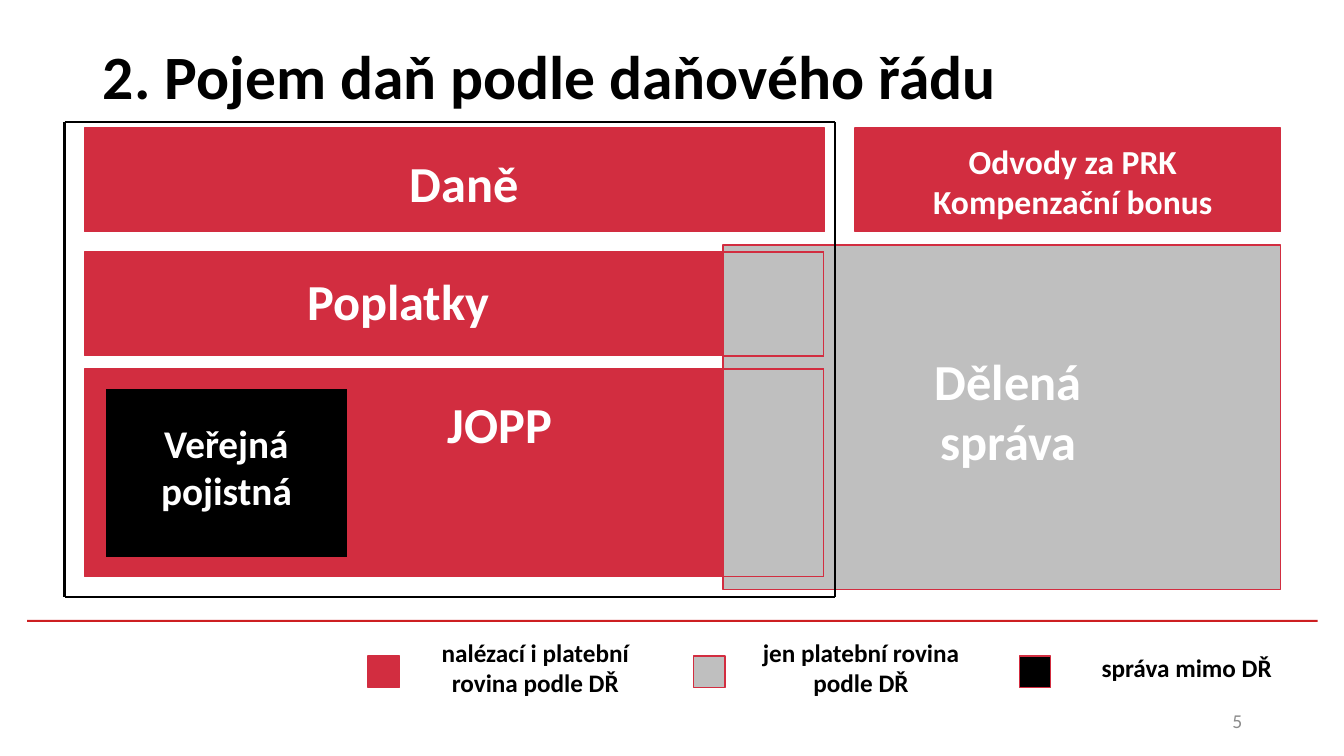
from lxml import etree
from pptx import Presentation
from pptx.dml.color import RGBColor
from pptx.enum.shapes import MSO_CONNECTOR, MSO_SHAPE
from pptx.enum.text import MSO_ANCHOR, PP_ALIGN
from pptx.oxml.ns import qn
from pptx.util import Inches, Pt

RECTANGLE = MSO_SHAPE.RECTANGLE
STRAIGHT = MSO_CONNECTOR.STRAIGHT
LEFT, CENTER, RIGHT = PP_ALIGN.LEFT, PP_ALIGN.CENTER, PP_ALIGN.RIGHT
TOP, MIDDLE = MSO_ANCHOR.TOP, MSO_ANCHOR.MIDDLE
TITLE_ONLY = 5
RED, GREY, BLACK, WHITE = "D22D40", "BFBFBF", "000000", "FFFFFF"


def color(value):
    """Turn a hex string into a colour."""
    return RGBColor.from_string(value)


def lengths(box):
    """Convert a box given in inches."""
    return [Inches(value) for value in box]


def write(frame, text, size=36, ink=WHITE, bold=True, align=CENTER, anchor=TOP):
    """Fill a text frame with one formatted paragraph."""
    frame.word_wrap = True
    frame.vertical_anchor = anchor
    para = frame.paragraphs[0]
    para.text = text
    para.alignment = align
    para.font.name = "Calibri"
    para.font.size = Pt(size)
    para.font.bold = bold
    para.font.color.rgb = color(ink)


def add_text(page, box, text, **style):
    """Add a text box."""
    write(page.shapes.add_textbox(*lengths(box)).text_frame, text, **style)


def add_block(page, box, fill, outline=RED):
    """Add a filled rectangle, outlined unless outline is None."""
    block = page.shapes.add_shape(RECTANGLE, *lengths(box))
    block.shadow.inherit = False
    block.fill.solid()
    block.fill.fore_color.rgb = color(fill)
    if outline:
        block.line.color.rgb = color(outline)
        block.line.width = Pt(1)
    else:
        block.line.fill.background()


def add_outline(page, box, ink, width):
    """Draw the four sides of a box as lines."""
    left, top, wide, high = box
    right, bottom = left + wide, top + high
    corners = [(left, top), (right, top), (right, bottom), (left, bottom)]
    for start, end in zip(corners, corners[1:] + corners[:1]):
        side = page.shapes.add_connector(STRAIGHT, *lengths(start + end))
        side.line.color.rgb = color(ink)
        side.line.width = Pt(width)
        etree.SubElement(side._element.spPr, qn("a:effectLst"))


def add_title(page, box, text):
    """Place and format the title."""
    title = page.shapes.title
    title.left, title.top, title.width, title.height = lengths(box)
    write(title.text_frame, text, size=44, ink=BLACK, align=LEFT, anchor=MIDDLE)


def add_diagram(page, box):
    """Draw the overlapping areas of tax administration."""
    left, top, wide, high = box
    inner = left + 0.2
    shared = left + 6.53
    shared_width = 1
    right = left + wide
    fees = (top + 1.29, 1.03)
    payments = (top + 2.45, 2.06)

    add_block(page, (shared, top + 1.22, right - shared, 3.42), GREY)
    for row_top, row_height in (payments, fees):
        add_block(page, (inner, row_top, shared - inner, row_height), RED)
    add_block(page, (inner, top + 0.06, 7.34, 1.03), RED)
    add_block(page, (right - 4.22, top + 0.06, 4.22, 1.03), RED)
    add_block(page, (left + 0.4, top + 2.64, 2.41, 1.68), BLACK)

    labels = [
        ("Daně", 1, 0.25, 5.93, 0.71, 36),
        ("Poplatky", 1, 1.42, 4.62, 0.71, 36),
        ("JOPP", 2.41, 2.64, 3.82, 0.71, 36),
        ("Odvody za PRK\vKompenzační bonus", 8.24, 0.14, 3.52, 0.91, 24),
        ("Veřejná pojistná", 0.5, 2.9, 2.21, 1.04, 28),
        ("Dělená správa", 7.9, 2.21, 2.92, 1.31, 36),
    ]
    for text, across, down, width, height, size in labels:
        add_text(page, (left + across, top + down, width, height), text, size=size)

    add_outline(page, (left, top, 7.64, high), BLACK, 1.5)
    for row_top, row_height in (fees, payments):
        add_outline(page, (shared, row_top, shared_width, row_height), RED, 1)


def add_legend(page, box):
    """Explain the three fills in equal columns."""
    left, top, wide, high = box
    entries = [
        (RED, "nalézací i platební rovina podle DŘ", high),
        (GREY, "jen platební rovina podle DŘ", high),
        (BLACK, "správa mimo DŘ", 0.4),
    ]
    step = 3.23
    for index, (fill, text, height) in enumerate(entries):
        start = left + index * step
        add_block(page, (start, top + 0.24, 0.31, 0.31), fill)
        text_top = top + (high - height) / 2
        text_width = wide - 2 * step - 0.4
        add_text(page, (start + 0.4, text_top, text_width, height), text, size=18, ink=BLACK)


def add_footer(page, box, number):
    """Add the page number."""
    add_text(page, box, number, size=14, ink="8C8C8C", bold=False, align=RIGHT, anchor=MIDDLE)


def main():
    """Build and save the deck."""
    deck = Presentation()
    deck.slide_width, deck.slide_height = Inches(13.33), Inches(7.5)
    page = deck.slides.add_slide(deck.slide_layouts[TITLE_ONLY])
    add_block(page, (0.27, 6.15, 12.8, 0.02), "CD1F21", outline=None)
    add_title(page, (0.92, 0.02, 11.5, 1.45), "2. Pojem daň podle daňového řádu")
    add_diagram(page, (0.64, 1.21, 12.06, 4.71))
    add_legend(page, (3.65, 6.27, 9.38, 0.71))
    add_footer(page, (9.42, 6.95, 3, 0.4), "5")
    deck.save("out.pptx")


if __name__ == "__main__":
    main()
